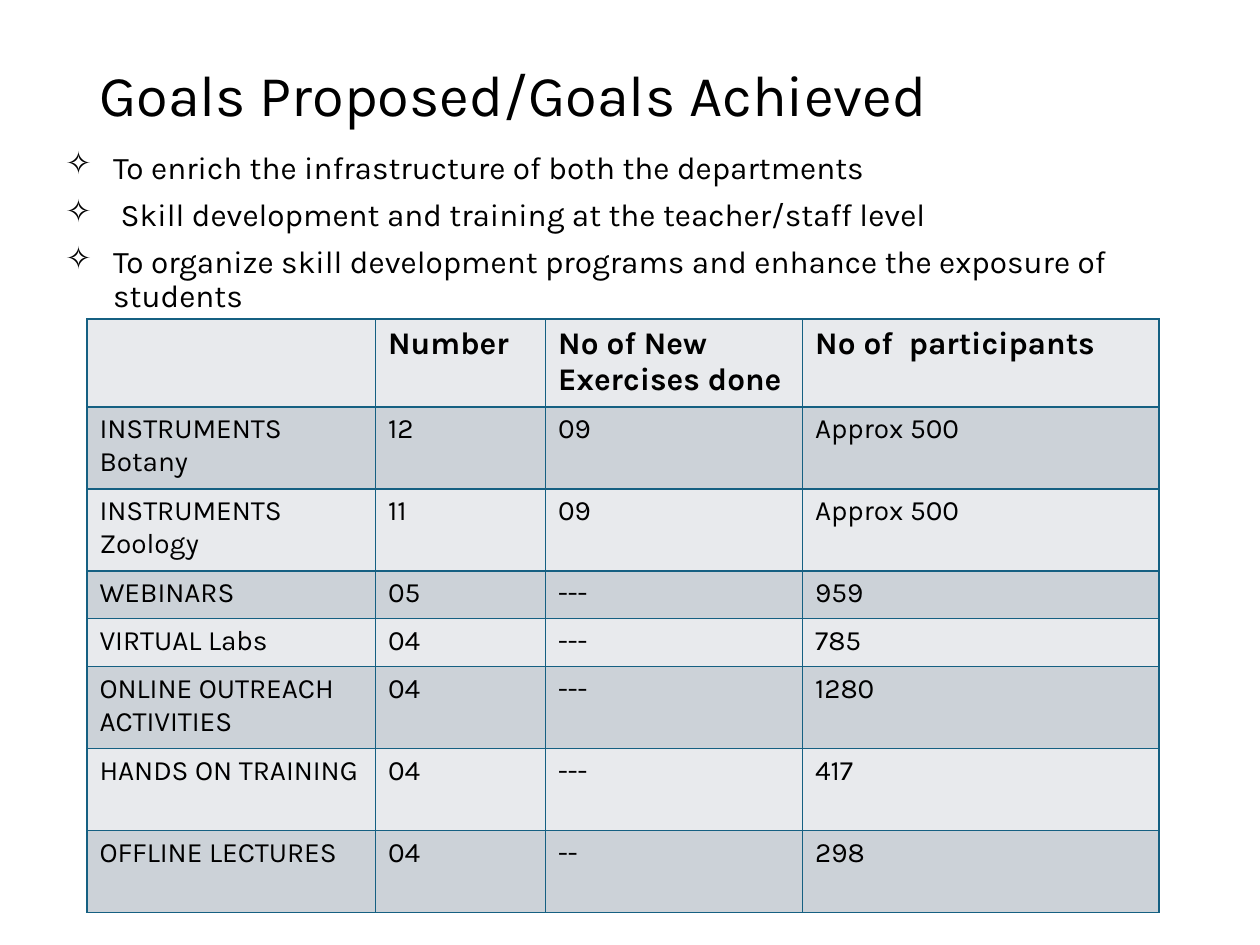
from lxml.etree import SubElement
from pptx import Presentation
from pptx.dml.color import RGBColor
from pptx.enum.text import MSO_ANCHOR
from pptx.oxml.ns import qn
from pptx.util import Inches, Pt

FONT = "Karla"
COLORS = {"text": "000000", "border": "156082", "light": "E8EAED", "dark": "CCD2D8"}
SLIDE_SIZE = (10, 7.5)
TITLE = "Goals Proposed/Goals Achieved"
GOALS = [
    "To enrich the infrastructure of both the departments",
    " Skill development and training at the teacher/staff level",
    "To organize skill development programs and enhance the exposure of students",
]
HEADER = ["", "Number", "No of New Exercises done", "No of  participants"]
ACTIVITIES = [
    ["INSTRUMENTS\nBotany", "12", "09", "Approx 500"],
    ["INSTRUMENTS\nZoology", "11", "09", "Approx 500"],
    ["WEBINARS", "05", "---", "959"],
    ["VIRTUAL Labs", "04", "---", "785"],
    ["ONLINE OUTREACH ACTIVITIES", "04", "---", "1280"],
    ["HANDS ON TRAINING", "04", "---", "417"],
    ["OFFLINE LECTURES", "04", "--", "298"],
]
COLUMN_WIDTHS = [2.29, 1.35, 2.04, 2.83]
TALL_ROW, SHORT_ROW = 0.65, 0.38
SHORT_LABELS = {"WEBINARS", "VIRTUAL Labs"}
TABLE_LEFT, TABLE_TOP = 0.69, 2.53


def rgb(name):
    return RGBColor.from_string(COLORS[name])


def add_run(paragraph, text, size, bold=False):
    run = paragraph.add_run()
    run.text = text
    run.font.name = FONT
    run.font.size = Pt(size)
    run.font.bold = bold
    run.font.color.rgb = rgb("text")


def write_lines(frame, lines, size, bold=False):
    for index, line in enumerate(lines):
        paragraph = frame.add_paragraph() if index else frame.paragraphs[0]
        add_run(paragraph, line, size, bold)


def add_text(slide, box, lines, size):
    frame = slide.shapes.add_textbox(*map(Inches, box)).text_frame
    frame.word_wrap = True
    write_lines(frame, lines, size)
    for paragraph in frame.paragraphs:
        paragraph.line_spacing = 0.9
    return frame


def add_bullet(paragraph):
    properties = paragraph._p.get_or_add_pPr()
    properties.set("marL", str(Inches(0.38)))
    properties.set("indent", str(-Inches(0.38)))
    SubElement(properties, qn("a:buChar"), char="✧")


def add_borders(cell):
    properties = cell._tc.get_or_add_tcPr()
    for position, side in enumerate(("lnL", "lnR", "lnT", "lnB")):
        line = SubElement(properties, qn(f"a:{side}"), w=str(Pt(1)))
        fill = SubElement(line, qn("a:solidFill"))
        SubElement(fill, qn("a:srgbClr"), val=COLORS["border"])
        properties.insert(position, line)


def add_goals_table(slide):
    rows = [HEADER] + ACTIVITIES
    heights = [SHORT_ROW if row[0] in SHORT_LABELS else TALL_ROW for row in rows]
    box = (TABLE_LEFT, TABLE_TOP, sum(COLUMN_WIDTHS), sum(heights))
    table = slide.shapes.add_table(
        len(rows), len(COLUMN_WIDTHS), *map(Inches, box)
    ).table
    for column, width in zip(table.columns, COLUMN_WIDTHS):
        column.width = Inches(width)
    for row_index, (values, height) in enumerate(zip(rows, heights)):
        table.rows[row_index].height = Inches(height)
        is_header = row_index == 0
        for column_index, value in enumerate(values):
            cell = table.cell(row_index, column_index)
            cell.fill.solid()
            cell.fill.fore_color.rgb = rgb("dark" if row_index % 2 else "light")
            add_borders(cell)
            if value:
                size = 18 if is_header else 16
                write_lines(cell.text_frame, value.split("\n"), size, is_header)


def main():
    presentation = Presentation()
    presentation.slide_width, presentation.slide_height = map(Inches, SLIDE_SIZE)
    slide = presentation.slides.add_slide(presentation.slide_layouts[6])
    goals = add_text(slide, (0.42, 1.16, 9.05, 1.37), GOALS, 18)
    for index, paragraph in enumerate(goals.paragraphs):
        paragraph.space_before = Pt(7.5 if index else 0)
        add_bullet(paragraph)
    add_goals_table(slide)
    title = add_text(slide, (0.69, 0.32, 8.62, 0.91), [TITLE], 33)
    title.vertical_anchor = MSO_ANCHOR.MIDDLE
    presentation.save("out.pptx")


if __name__ == "__main__":
    main()
